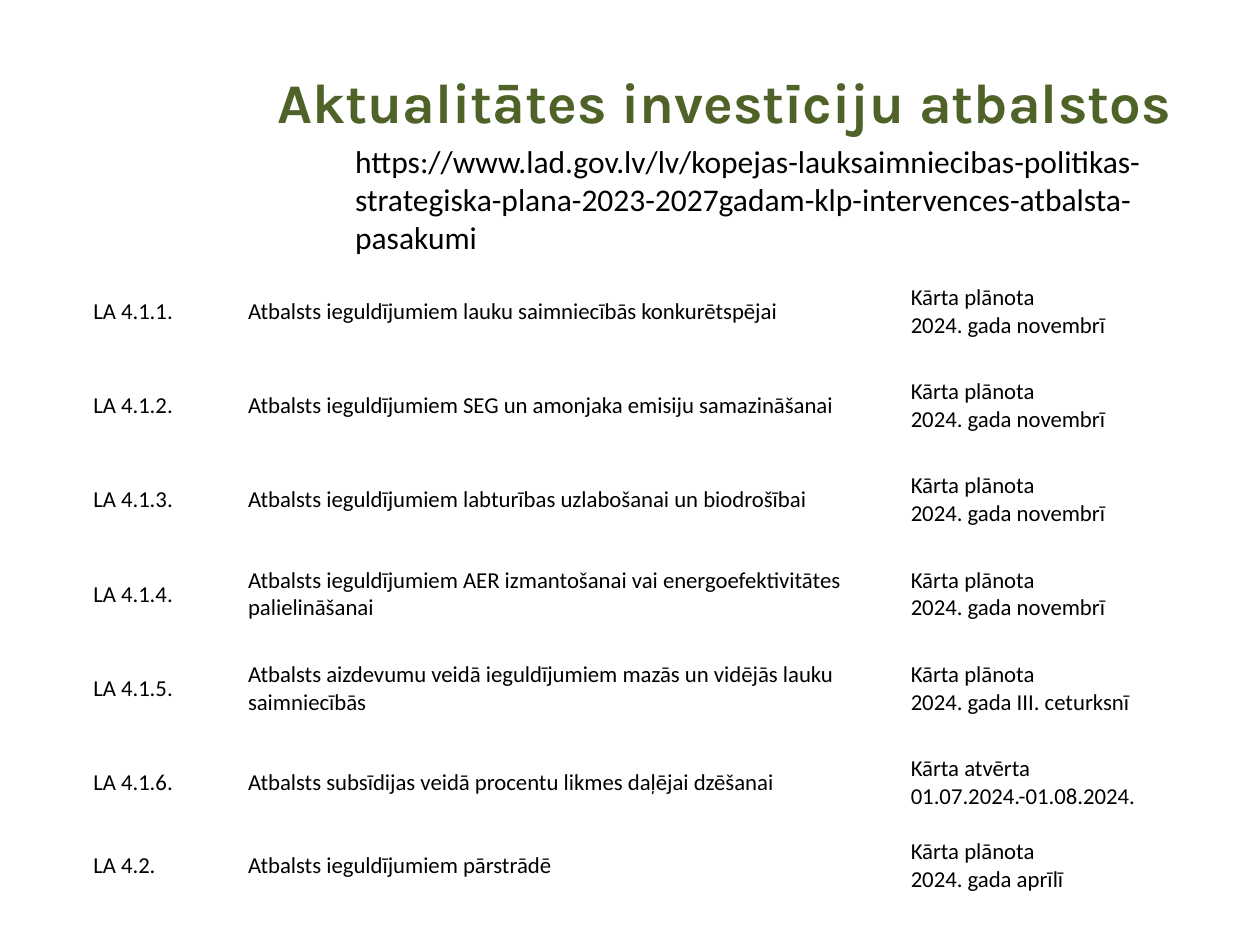
from pptx import Presentation
from pptx.dml.color import RGBColor
from pptx.enum.text import MSO_ANCHOR, MSO_AUTO_SIZE, PP_ALIGN
from pptx.util import Cm, Pt

MIDDLE = MSO_ANCHOR.MIDDLE
NO_FIT = MSO_AUTO_SIZE.NONE
GROW = MSO_AUTO_SIZE.SHAPE_TO_FIT_TEXT
LEFT = PP_ALIGN.LEFT

HUES = {"title": "4F6228", "text": "000000", "cell": "FFFFFF"}
HEAD, BODY = "Karla", "Calibri"
SIDE, EDGE = Cm(0.18), Cm(0.1)

LINK = ("https://www.lad.gov.lv/lv/kopejas-lauksaimniecibas-politikas-"
        "strategiska-plana-2023-2027gadam-klp-intervences-atbalsta-pasakumi")
PLAN = "Kārta plānota"
OPEN = "Kārta atvērta"
NOV = "2024. gada novembrī"

# Code, measure, call status, call date
CALLS = [
    ("LA 4.1.1.", "Atbalsts ieguldījumiem lauku saimniecībās konkurētspējai",
     PLAN, NOV),
    ("LA 4.1.2.", "Atbalsts ieguldījumiem SEG un amonjaka emisiju samazināšanai",
     PLAN, NOV),
    ("LA 4.1.3.", "Atbalsts ieguldījumiem labturības uzlabošanai un biodrošībai",
     PLAN, NOV),
    ("LA 4.1.4.", "Atbalsts ieguldījumiem AER izmantošanai vai "
     "energoefektivitātes palielināšanai", PLAN, NOV),
    ("LA 4.1.5.", "Atbalsts aizdevumu veidā ieguldījumiem mazās un vidējās "
     "lauku saimniecībās", PLAN, "2024. gada III. ceturksnī"),
    ("LA 4.1.6.", "Atbalsts subsīdijas veidā procentu likmes daļējai dzēšanai",
     OPEN, "01.07.2024.-01.08.2024."),
    ("LA 4.2.", "Atbalsts ieguldījumiem pārstrādē", PLAN, "2024. gada aprīlī"),
]
COLS = [3.12, 13.36, 6.66]
ROWS = [1.9] * 6 + [1.44]


class Deck:
    def __init__(self, slide):
        self.slide = slide

    def fill(self, para, lines, size, font=BODY, hue="text", bold=False):
        for i, line in enumerate(lines):
            if i:
                para.add_line_break()
            run = para.add_run()
            run.text = line
            run.font.size = Pt(size)
            run.font.name = font
            run.font.bold = bold
            run.font.color.rgb = RGBColor.from_string(HUES[hue])

    def inset(self, area):
        area.margin_left = area.margin_right = SIDE
        area.margin_top = area.margin_bottom = EDGE
        area.vertical_anchor = MIDDLE

    def title(self, text, x, y, w, h):
        box = self.slide.shapes.title
        box.left, box.top, box.width, box.height = Cm(x), Cm(y), Cm(w), Cm(h)
        frame = box.text_frame
        frame.auto_size = NO_FIT
        frame.word_wrap = True
        self.inset(frame)
        para = frame.paragraphs[0]
        para.alignment = LEFT
        para.line_spacing = 0.9
        self.fill(para, [text], 32, HEAD, "title", True)

    def label(self, text, x, y, w, h):
        box = self.slide.shapes.add_textbox(Cm(x), Cm(y), Cm(w), Cm(h))
        frame = box.text_frame
        frame.word_wrap = True
        frame.auto_size = GROW
        self.fill(frame.paragraphs[0], [text], 18)

    def table(self, data, x, y, cols, rows):
        grid = self.slide.shapes.add_table(
            len(rows), len(cols), Cm(x), Cm(y),
            Cm(sum(cols)), Cm(sum(rows))).table
        grid.first_row = grid.horz_banding = False
        for col, wide in zip(grid.columns, cols):
            col.width = Cm(wide)
        for row, high, (code, name, *call) in zip(grid.rows, rows, data):
            row.height = Cm(high)
            for cell, lines in zip(row.cells, ([code], [name], call)):
                cell.fill.solid()
                cell.fill.fore_color.rgb = RGBColor.from_string(HUES["cell"])
                self.inset(cell)
                self.fill(cell.text_frame.paragraphs[0], lines, 13)


def main():
    show = Presentation()
    show.slide_width, show.slide_height = Cm(25.4), Cm(19.05)
    deck = Deck(show.slides.add_slide(show.slide_layouts[5]))

    # Heading and web address
    deck.title("Aktualitātes investīciju atbalstos", 5.41, 1.52, 19.79, 1.19)
    deck.label(LINK, 6.91, 2.74, 17.96, 2.57)

    # Support calls
    deck.table(CALLS, 1.7, 5.33, COLS, ROWS)

    show.save("out.pptx")


if __name__ == "__main__":
    main()
